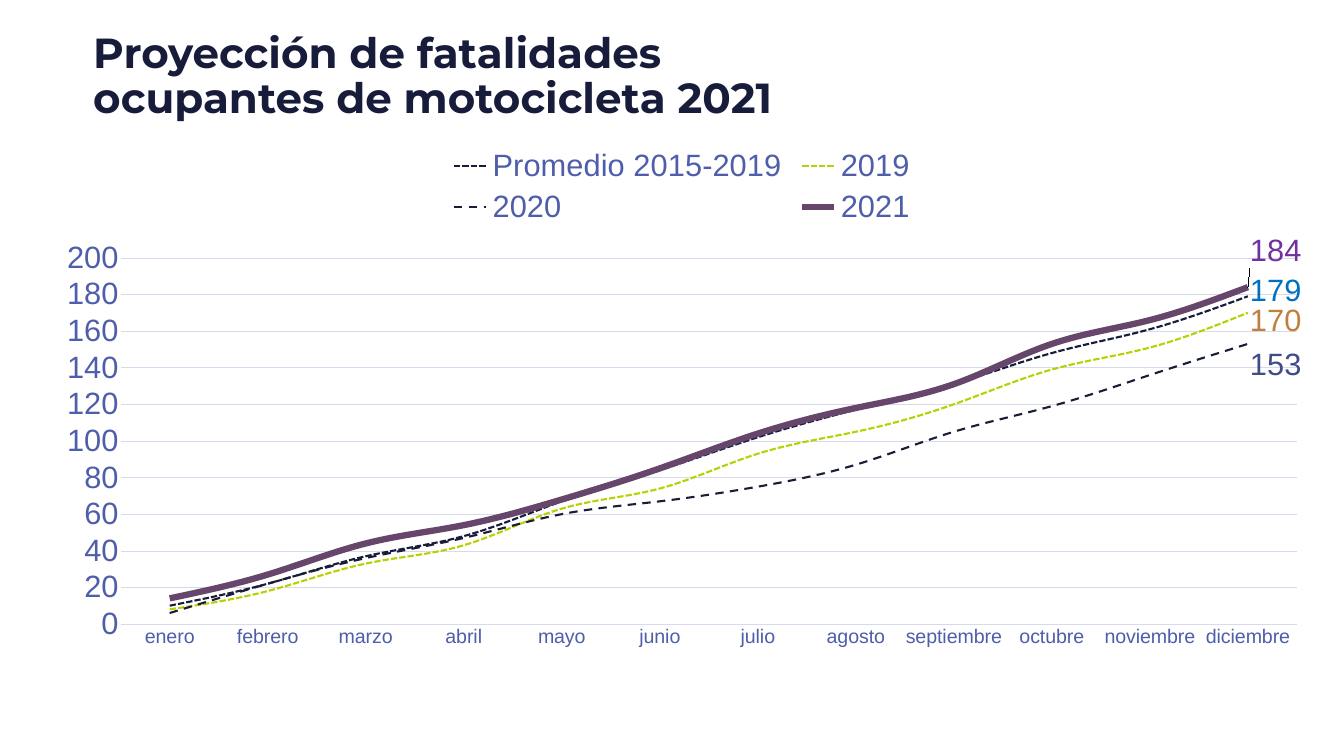
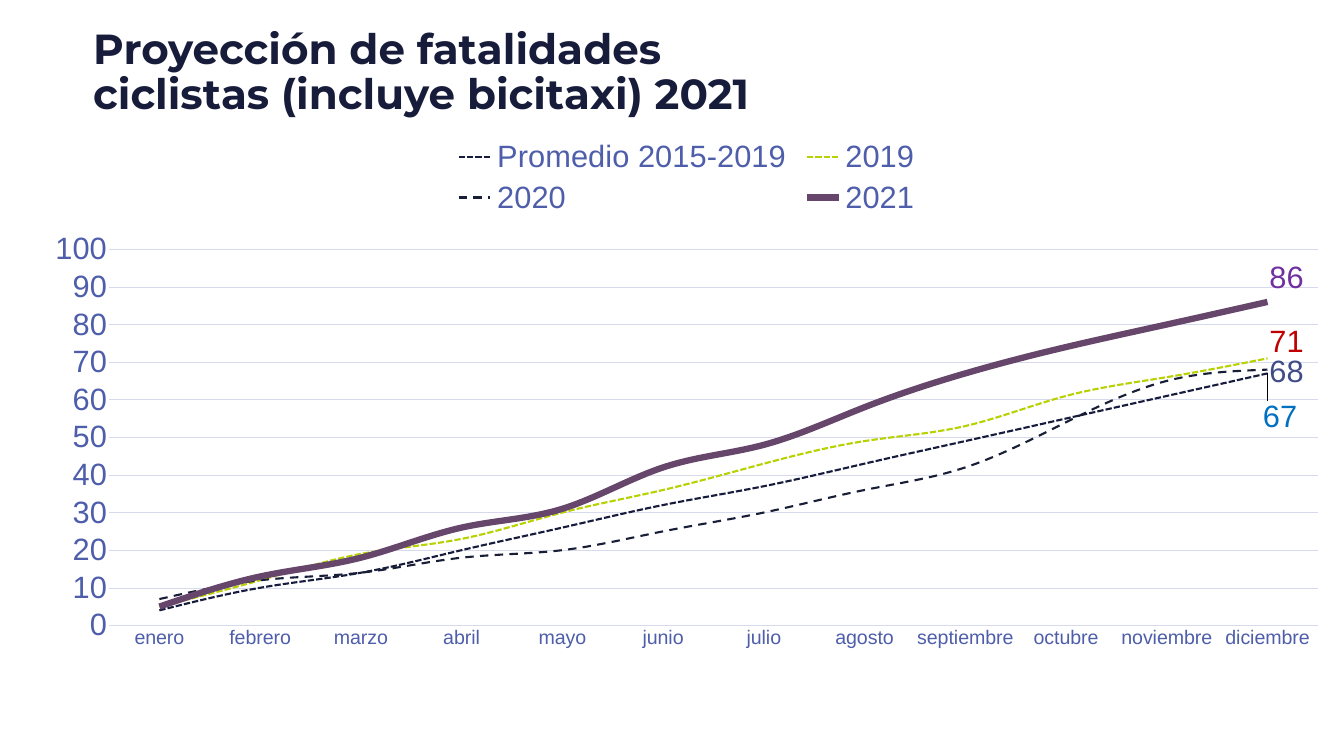
from lxml import etree
from pptx import Presentation
from pptx.chart.data import CategoryChartData
from pptx.dml.color import RGBColor
from pptx.enum.chart import (XL_CHART_TYPE, XL_LABEL_POSITION,
                             XL_LEGEND_POSITION, XL_MARKER_STYLE, XL_TICK_MARK)
from pptx.enum.dml import MSO_LINE
from pptx.enum.text import MSO_ANCHOR
from pptx.oxml.ns import qn
from pptx.util import Cm, Pt

LINE = XL_CHART_TYPE.LINE
TOP = XL_LEGEND_POSITION.TOP
RIGHT = XL_LABEL_POSITION.RIGHT
PLAIN = XL_MARKER_STYLE.NONE
NO_TICK = XL_TICK_MARK.NONE
BOTTOM = MSO_ANCHOR.BOTTOM
DOTS, DASH, SOLID = MSO_LINE.SQUARE_DOT, MSO_LINE.DASH, MSO_LINE.SOLID

NAVY, TEXT, BLUE, GRID = "171C3B", "22294A", "4E5EAA", "D6DAEC"
MONTHS = ["enero", "febrero", "marzo", "abril", "mayo", "junio", "julio",
          "agosto", "septiembre", "octubre", "noviembre", "diciembre"]
STYLES = [("Promedio 2015-2019", "171C3C", 3, DOTS),
          ("2019", "B8D101", 3, DOTS),
          ("2020", "191E37", 3, DASH),
          ("2021", "67466B", 9, SOLID)]

SLIDES = [
    dict(title="Proyección de fatalidades\vocupantes de motocicleta 2021",
         top=1.4, box=(2.08, 7.01, 64.57, 26.14), step=20,
         plot=(0.062, 0.229, 0.918, 0.706),
         rows=[[10, 22, 37, 48, 67, 84, 102, 117, 131, 148, 161, 179],
               [8, 18, 33, 43, 63, 74, 93, 105, 120, 139, 151, 170],
               [6, 22, 36, 47, 60, 67, 75, 87, 105, 119, 136, 153],
               [14, 27, 44, 54, 68, 85, 104, 118, 131, 153, 166, 184]],
         tags=[("0070C0", 0, -0.01), ("C0803C", 0, 0.015),
               ("3F4C88", 0, 0.04), ("7030A0", 0, -0.07)]),
    dict(title="Proyección de fatalidades\vciclistas (incluye bicitaxi) 2021",
         top=1.19, box=(1.45, 6.53, 66.29, 26.7), step=10,
         plot=(0.061, 0.226, 0.919, 0.71),
         rows=[[4, 10, 14, 20, 26, 32, 37, 43, 49, 55, 61, 67],
               [5, 12, 19, 23, 30, 36, 43, 49, 53, 61, 66, 71],
               [7, 12, 14, 18, 20, 25, 30, 36, 42, 54, 65, 68],
               [5, 13, 18, 26, 31, 42, 48, 58, 67, 74, 80, 86]],
         tags=[("0070C0", -0.005, 0.083), ("C00000", 0, -0.03),
               ("3F4C88", 0, 0.005), ("7030A0", 0, -0.045)]),
]


def tint(color, code):
    color.rgb = RGBColor.from_string(code)


def set_font(font, name, size, code, bold=False):
    font.name, font.size, font.bold = name, Pt(size), bold
    tint(font.color, code)


def set_line(line, code, width, dash=SOLID):
    line.width = Pt(width)
    line.fill.solid()
    tint(line.color, code)
    line.dash_style = dash


def add_title(slide, text, top):
    box = slide.shapes.add_textbox(Cm(4.57), Cm(top), Cm(60.05), Cm(4.93))
    frame = box.text_frame
    frame.word_wrap = True
    frame.vertical_anchor = BOTTOM
    frame.margin_left = frame.margin_right = Cm(0.13)
    frame.margin_top = frame.margin_bottom = Cm(0.13)
    para = frame.paragraphs[0]
    para.text = text
    para.line_spacing = 0.9
    for run in para.runs:
        set_font(run.font, "Montserrat", 60, NAVY, True)


def set_layout(parent, index, pairs):
    for old in parent.findall(qn("c:layout")):
        parent.remove(old)
    layout = etree.Element(qn("c:layout"))
    manual = etree.SubElement(layout, qn("c:manualLayout"))
    for key, value in pairs:
        etree.SubElement(manual, qn("c:" + key)).set("val", str(value))
    parent.insert(index, layout)


def style_axis(axis, size):
    axis.major_tick_mark = axis.minor_tick_mark = NO_TICK
    set_font(axis.tick_labels.font, "Arial", size, BLUE)


def style_axes(chart, step):
    months, count = chart.category_axis, chart.value_axis
    style_axis(months, 28)
    set_line(months.format.line, GRID, 0.75)
    style_axis(count, 44)
    count.format.line.fill.background()
    count.minimum_scale, count.maximum_scale = 0, 10 * step
    count.major_unit = step
    set_line(count.major_gridlines.format.line, GRID, 0.75)


def add_tag(series, code):
    label = series.points[len(MONTHS) - 1].data_label
    set_font(label.font, "Arial", 44, code)
    label.position = RIGHT


def add_graph(slide, box, plot, step, rows, tags):
    data = CategoryChartData(number_format="0")
    data.categories = MONTHS
    for style, row in zip(STYLES, rows):
        data.add_series(style[0], row)
    chart = slide.shapes.add_chart(LINE, *map(Cm, box), data).chart
    chart.has_title = False
    set_font(chart.font, "Arial", 44, TEXT)
    chart.has_legend = True
    chart.legend.position = TOP
    chart.legend.include_in_layout = False
    set_font(chart.legend.font, "Arial", 44, BLUE)
    chart.plots[0].vary_by_categories = False
    style_axes(chart, step)

    for series, style, tag in zip(chart.plots[0].series, STYLES, tags):
        series.smooth = True
        series.marker.style = PLAIN
        set_line(series.format.line, *style[1:])
        add_tag(series, tag[0])

    area = chart.element.xpath(".//c:plotArea")[0]
    modes = [("layoutTarget", "inner"), ("xMode", "edge"), ("yMode", "edge")]
    set_layout(area, 0, modes + list(zip("xywh", plot)))
    for label, tag in zip(chart.element.xpath(".//c:dLbl"), tags):
        set_layout(label, 1, zip("xy", tag[1:]))


def main():
    deck = Presentation()
    deck.slide_width, deck.slide_height = Cm(67.73), Cm(38.1)
    for page in SLIDES:
        slide = deck.slides.add_slide(deck.slide_layouts[6])
        add_title(slide, page["title"], page["top"])
        add_graph(slide, page["box"], page["plot"], page["step"],
                  page["rows"], page["tags"])
    deck.save("out.pptx")


if __name__ == "__main__":
    main()
